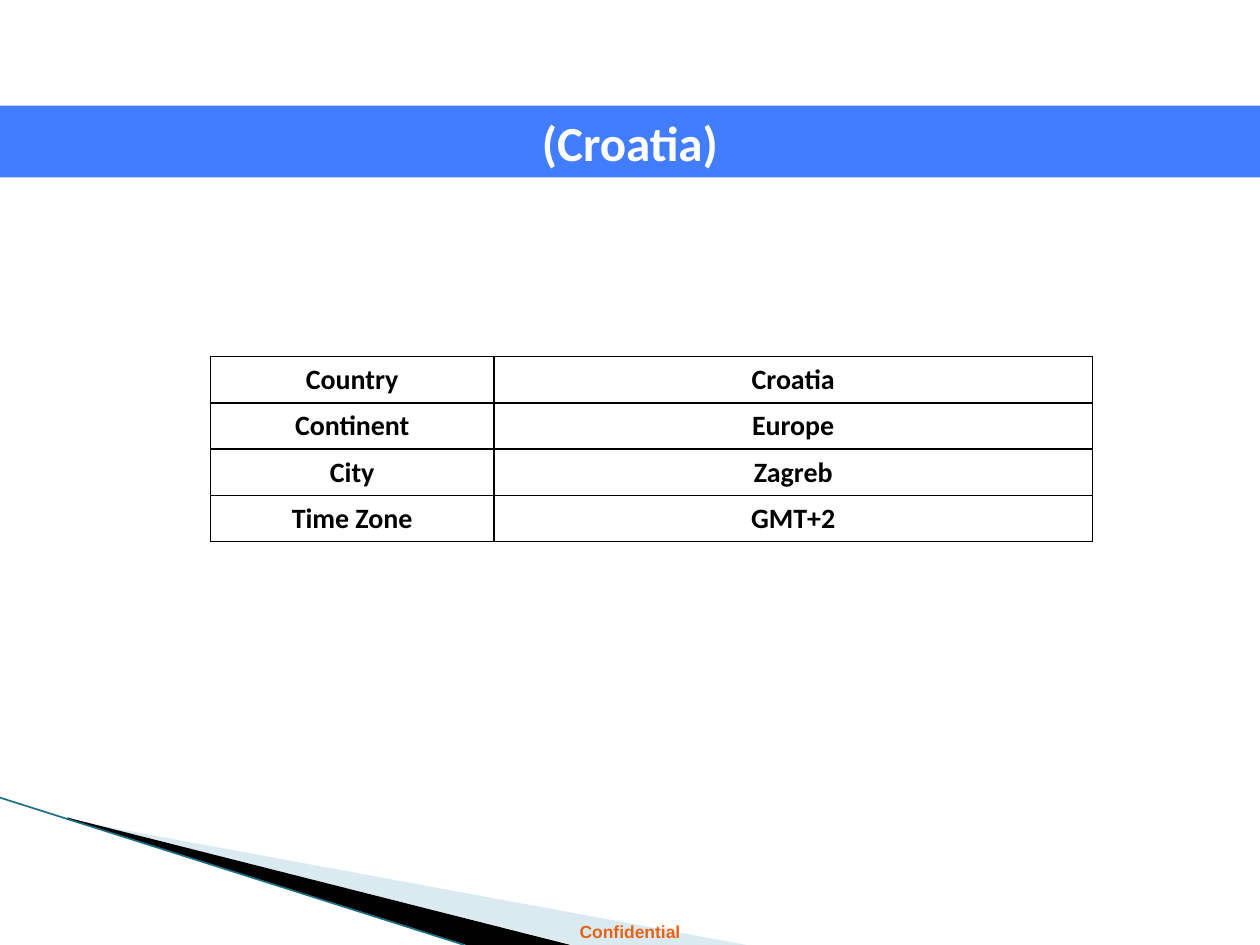
"""Build the Croatia country slide."""
from lxml.etree import SubElement
from pptx import Presentation
from pptx.dml.color import RGBColor
from pptx.enum.shapes import MSO_CONNECTOR, MSO_SHAPE
from pptx.enum.text import MSO_ANCHOR, PP_ALIGN
from pptx.oxml.ns import qn
from pptx.util import Cm, Pt

BLACK = "000000"


def paint(color, code):
    color.rgb = RGBColor.from_string(code)


class Deck:
    def __init__(self, slide, font):
        self.slide = slide
        self.shapes = slide.shapes
        self.font = font

    def text(self, frame, words, size, code, **style):
        frame.word_wrap = True
        frame.vertical_anchor = MSO_ANCHOR.MIDDLE
        para = frame.paragraphs[0]
        para.alignment = PP_ALIGN.CENTER
        run = para.add_run()
        run.text = words
        look = {"name": self.font, "size": Pt(size), "bold": True, **style}
        for key, value in look.items():
            setattr(run.font, key, value)
        paint(run.font.color, code)

    def fill(self, shape, code, alpha=100):
        shape.shadow.inherit = False
        shape.fill.solid()
        paint(shape.fill.fore_color, code)
        shape.line.fill.background()
        if alpha < 100:
            tint = shape._element.spPr.find(".//" + qn("a:srgbClr"))
            SubElement(tint, qn("a:alpha"), val=str(alpha * 1000))

    def wedge(self, points, code, alpha=100):
        first, *rest = [(Cm(x), Cm(y)) for x, y in points]
        form = self.shapes.build_freeform(*first)
        form.add_line_segments(rest, close=True)
        self.fill(form.convert_to_shape(), code, alpha)

    def line(self, start, end, code, width):
        ends = [Cm(v) for v in (*start, *end)]
        line = self.shapes.add_connector(MSO_CONNECTOR.STRAIGHT, *ends)
        paint(line.line.color, code)
        line.line.width = Pt(width)
        SubElement(line._element.spPr, qn("a:effectLst"))

    def band(self, box, code, words, size):
        shape = self.shapes.add_shape(MSO_SHAPE.RECTANGLE, *map(Cm, box))
        self.fill(shape, code)
        self.text(shape.text_frame, words, size, "FFFFFF")

    def label(self, box, words, size, code, **style):
        shape = self.shapes.add_textbox(*map(Cm, box))
        self.text(shape.text_frame, words, size, code, **style)

    def edge(self, cell, code, width):
        props = cell._tc.get_or_add_tcPr()
        for side in ("L", "R", "T", "B"):
            line = SubElement(props, qn("a:ln" + side), w=str(int(Pt(width))))
            solid = SubElement(line, qn("a:solidFill"))
            SubElement(solid, qn("a:srgbClr"), val=code)

    def table(self, left, top, cols, high, rows, size):
        box = left, top, sum(cols), high * len(rows)
        grid = self.shapes.add_table(len(rows), len(cols), *map(Cm, box)).table
        for key in ("first_row", "horz_banding"):
            setattr(grid, key, False)
        for col, width in zip(grid.columns, cols):
            col.width = Cm(width)
        for r, row in enumerate(rows):
            for c, words in enumerate(row):
                cell = grid.cell(r, c)
                self.edge(cell, BLACK, 1)
                cell.fill.background()
                cell.vertical_anchor = MSO_ANCHOR.MIDDLE
                self.text(cell.text_frame, words, size, BLACK)


def main():
    show = Presentation()
    show.slide_width, show.slide_height = Cm(25.4), Cm(19.05)
    deck = Deck(show.slides.add_slide(show.slide_layouts[6]), "Calibri")
    deck.wedge([(1.4, 16.53), (15.05, 19.05), (11.55, 19.05), (1.4, 16.5)],
               "A0CBDC", 40)
    deck.wedge([(1.35, 16.48), (11.5, 19.05), (9.4, 19.05), (1.37, 16.51)],
               BLACK)
    deck.line((0, 16.08), (9.36, 19.05), "1B6F86", 0.95)
    deck.label((0, 18.44, 25.4, 0.69), "Confidential", 10, "EB6312",
               name="Arial")
    deck.band((0, 2.13, 25.4, 1.45), "437DFF", "(Croatia)", 28)
    facts = [("Country", "Croatia"), ("Continent", "Europe"),
             ("City", "Zagreb"), ("Time Zone", "GMT+2")]
    deck.table(4.24, 7.19, (5.72, 12.06), 0.93, facts, 16)
    show.save("out.pptx")


if __name__ == "__main__":
    main()
